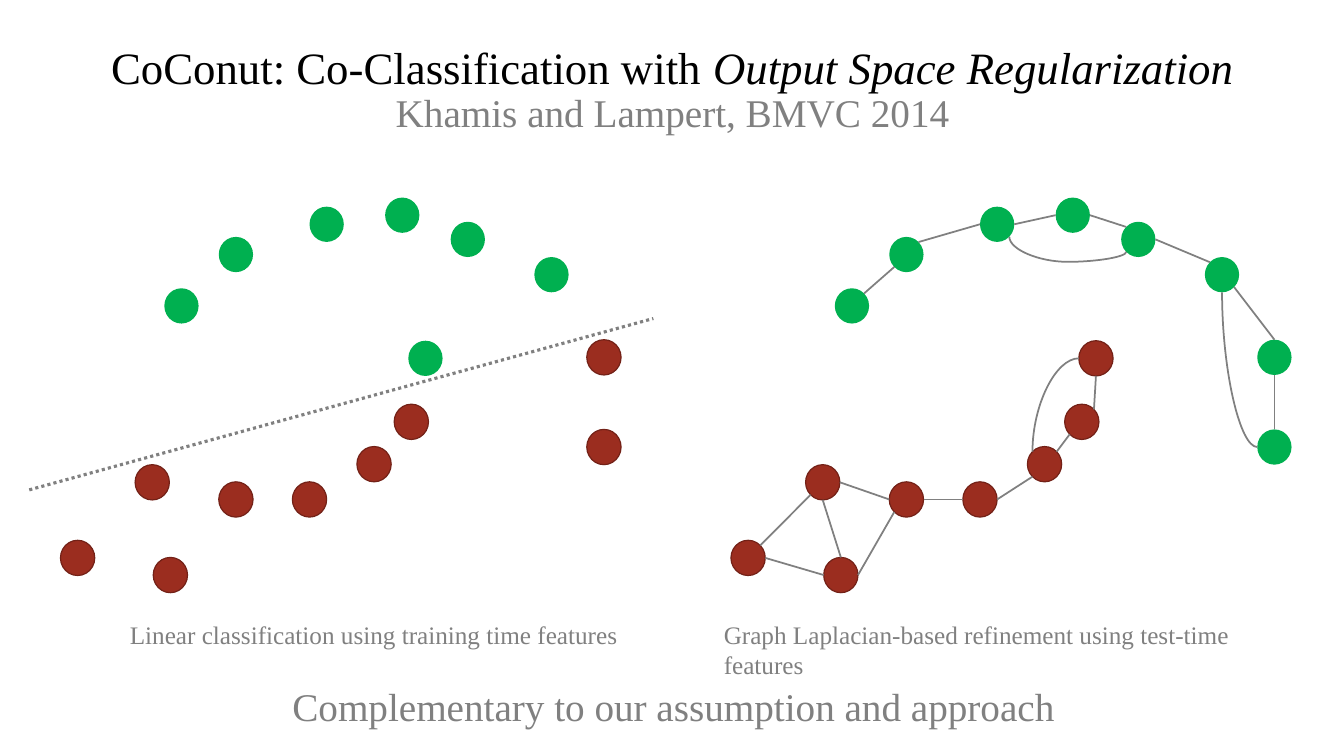
"""Builds the slide on co-classification with output space regularization."""
import math

import lxml.etree
import pptx
import pptx.dml.color
import pptx.enum.dml
import pptx.enum.shapes
import pptx.enum.text
import pptx.oxml.ns
import pptx.util

Inches = pptx.util.Inches
Pt = pptx.util.Pt
qn = pptx.oxml.ns.qn
CONNECTOR = pptx.enum.shapes.MSO_CONNECTOR

COLORS = {"black": "000000", "gray": "808080", "green": "00B050",
          "red": "9B2D1F", "red_edge": "732117"}
FONT = "Times New Roman"
NODE_WIDTH, NODE_HEIGHT = 0.34, 0.35
GRAPH_OFFSET = 6.65

NODES = {
    "arc1": (1.63, 2.86, "green", "green"),
    "arc2": (2.17, 2.35, "green", "green"),
    "arc3": (3.07, 2.05, "green", "green"),
    "arc4": (3.82, 1.96, "green", "green"),
    "arc5": (4.47, 2.2, "green", "green"),
    "arc6": (5.3, 2.55, "green", "green"),
    "arc7": (5.82, 3.37, "red", "green"),
    "arc8": (5.82, 4.26, "red", "green"),
    "tail1": (4.05, 3.38, "green", "red"),
    "tail2": (3.91, 4.01, "red", "red"),
    "tail3": (3.54, 4.43, "red", "red"),
    "tail4": (2.9, 4.78, "red", "red"),
    "tail5": (2.17, 4.78, "red", "red"),
    "tail6": (1.34, 4.61, "red", "red"),
    "tail7": (1.52, 5.53, "red", "red"),
    "tail8": (0.6, 5.36, "red", "red"),
}
ANGLES = {"E": 0, "SE": 45, "S": 90, "SW": 135, "W": 180, "NW": 225, "N": 270, "NE": 315}
EDGES = [
    ("arc2", "NE", "arc3", "W"), ("arc4", "W", "arc3", "E"),
    ("arc2", "SW", "arc1", "NE"), ("arc5", "NW", "arc4", "E"),
    ("arc6", "NW", "arc5", "E"), ("tail7", "W", "tail8", "E"),
    ("arc7", "N", "arc6", "SE"), ("arc8", "N", "arc7", "S"),
    ("tail6", "SW", "tail8", "NE"), ("tail6", "S", "tail7", "N"),
    ("tail6", "E", "tail5", "W"), ("tail5", "SW", "tail7", "E"),
    ("tail4", "W", "tail5", "E"), ("tail3", "SW", "tail4", "E"),
    ("tail1", "S", "tail2", "NE"), ("tail2", "SW", "tail3", "NE"),
]
CURVES = [
    ("arc3", "SE", "arc5", "SW", "curvedConnector3", 270, {"flipH": "1"}, 165900),
    ("arc6", "S", "arc8", "W", "curvedConnector2", 270, {"flipH": "1"}, None),
    ("tail3", "NW", "tail1", "W", "curvedConnector2", 90, {"flipH": "1", "flipV": "1"}, None),
]
BOUNDARY = ((0.29, 4.86), (6.48, 3.16))

TITLE = [[("CoConut: Co-Classification with ", 32, "black", False),
          ("Output Space Regularization", 32, "black", True)],
         [("Khamis and Lampert, BMVC 2014", 28, "gray", False)]]
LINEAR = [[("Linear classification using training time features", 18, "gray", False)]]
GRAPH = [[("Graph Laplacian-based refinement using test-time features", 18, "gray", False)]]
CLOSING = [[("Complementary to our assumption and approach", 28, "gray", False)]]
TEXTS = [
    ((0.92, 0.4, 11.5, 1.11), TITLE, True),
    ((1.19, 6.09, 5.07, 0.4), LINEAR, False),
    ((7.08, 6.09, 5.95, 0.4), GRAPH, False),
    ((0.93, 6.77, 11.5, 0.91), CLOSING, True),
]


def rgb(name):
    return pptx.dml.color.RGBColor.from_string(COLORS[name])


def add_text(slide, box, lines, centered):
    frame = slide.shapes.add_textbox(*map(Inches, box)).text_frame
    frame.word_wrap = True
    paragraph = frame.paragraphs[0]
    if centered:
        paragraph.alignment = pptx.enum.text.PP_ALIGN.CENTER
        paragraph.line_spacing = 0.9
        paragraph.space_before = Pt(10)
    for index, line in enumerate(lines):
        if index:
            paragraph.add_line_break()
        for text, size, color, italic in line:
            run = paragraph.add_run()
            run.text = text
            run.font.name = FONT
            run.font.size = Pt(size)
            run.font.italic = italic
            run.font.color.rgb = rgb(color)


def add_node(slide, left, top, color):
    node = slide.shapes.add_shape(
        pptx.enum.shapes.MSO_SHAPE.OVAL,
        *map(Inches, (left, top, NODE_WIDTH, NODE_HEIGHT)))
    node.shadow.inherit = False
    node.fill.solid()
    node.fill.fore_color.rgb = rgb(color)
    if color == "red":
        node.line.color.rgb = rgb("red_edge")
        node.line.width = Pt(0.85)
    else:
        node.line.fill.background()


def graph_point(name, side):
    left, top = NODES[name][:2]
    angle = math.radians(ANGLES[side])
    return (left + GRAPH_OFFSET + NODE_WIDTH / 2 * (1 + math.cos(angle)),
            top + NODE_HEIGHT / 2 * (1 + math.sin(angle)))


def add_line(slide, start, end, width=1.25, kind=CONNECTOR.STRAIGHT):
    connector = slide.shapes.add_connector(kind, *map(Inches, (*start, *end)))
    connector.line.color.rgb = rgb("gray")
    connector.line.width = Pt(width)
    lxml.etree.SubElement(connector.element.spPr, qn("a:effectLst"))
    return connector


def add_curve(slide, start, end, preset, rotation, flips, bend):
    center_x, center_y = (start[0] + end[0]) / 2, (start[1] + end[1]) / 2
    half_width, half_height = abs(end[1] - start[1]) / 2, abs(end[0] - start[0]) / 2
    connector = add_line(slide, (center_x - half_width, center_y - half_height),
                         (center_x + half_width, center_y + half_height),
                         kind=CONNECTOR.CURVE)
    transform = connector.element.spPr.find(qn("a:xfrm"))
    transform.set("rot", str(rotation * 60000))
    for name, value in flips.items():
        transform.set(name, value)
    geometry = connector.element.spPr.find(qn("a:prstGeom"))
    geometry.set("prst", preset)
    if bend:
        guides = geometry.find(qn("a:avLst"))
        if guides is None:
            guides = lxml.etree.SubElement(geometry, qn("a:avLst"))
        lxml.etree.SubElement(guides, qn("a:gd"), name="adj1", fmla=f"val {bend}")


def main():
    presentation = pptx.Presentation()
    presentation.slide_width = Inches(13.33)
    presentation.slide_height = Inches(7.5)
    slide = presentation.slides.add_slide(presentation.slide_layouts[6])
    for panel in range(2):
        for left, top, *colors in NODES.values():
            add_node(slide, left + panel * GRAPH_OFFSET, top, colors[panel])
    boundary = add_line(slide, *BOUNDARY, width=2.25)
    boundary.line.dash_style = pptx.enum.dml.MSO_LINE.ROUND_DOT
    for first, first_side, second, second_side in EDGES:
        add_line(slide, graph_point(first, first_side), graph_point(second, second_side))
    for first, first_side, second, second_side, *form in CURVES:
        add_curve(slide, graph_point(first, first_side),
                  graph_point(second, second_side), *form)
    for box, lines, centered in TEXTS:
        add_text(slide, box, lines, centered)
    presentation.save("out.pptx")


if __name__ == "__main__":
    main()
